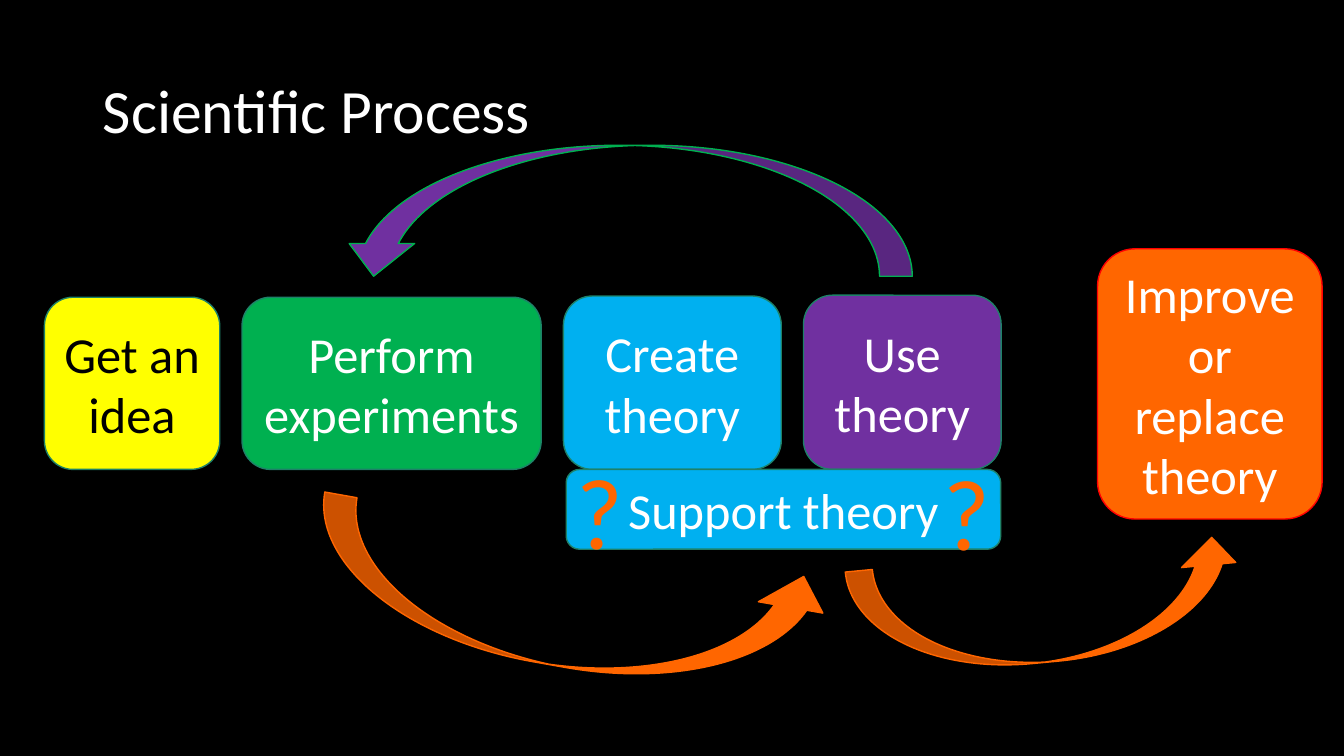
import pptx
import pptx.dml.color
import pptx.enum.shapes
import pptx.enum.text
import pptx.util

Cm = pptx.util.Cm
Shape = pptx.enum.shapes.MSO_SHAPE
Align = pptx.enum.text.PP_ALIGN
Anchor = pptx.enum.text.MSO_ANCHOR

BLACK, WHITE = "000000", "FFFFFF"
YELLOW, GREEN, BLUE, PURPLE, ORANGE = "FFFF00", "00B050", "00B0F0", "7030A0", "FF6600"
TEAL, RED = "1E8168", "FF0000"


def color(hex_value):
    return pptx.dml.color.RGBColor.from_string(hex_value)


def write(shape, text, size=36, text_color=WHITE, align=Align.CENTER,
          anchor=Anchor.MIDDLE, line_spacing=None):
    """Fill a shape with text, one paragraph per line."""
    frame = shape.text_frame
    frame.word_wrap = True
    frame.vertical_anchor = anchor
    frame.text = text
    for paragraph in frame.paragraphs:
        paragraph.alignment = align
        paragraph.line_spacing = line_spacing
        font = paragraph.runs[0].font
        font.name = "Calibri"
        font.size = pptx.util.Pt(size)
        font.color.rgb = color(text_color)


class ProcessSlide:
    def __init__(self, presentation):
        self.slide = presentation.slides.add_slide(presentation.slide_layouts[5])
        self.slide.background.fill.solid()
        self.slide.background.fill.fore_color.rgb = color(BLACK)

    def title(self, text, left, top, width, height):
        title = self.slide.shapes.title
        title.left, title.top = Cm(left), Cm(top)
        title.width, title.height = Cm(width), Cm(height)
        write(title, text, size=44, align=Align.LEFT, line_spacing=0.9)

    def preset(self, kind, left, top, width, height, fill, line):
        shape = self.slide.shapes.add_shape(kind, Cm(left), Cm(top), Cm(width), Cm(height))
        shape.shadow.inherit = False
        shape.fill.solid()
        shape.fill.fore_color.rgb = color(fill)
        shape.line.color.rgb = color(line)
        shape.line.width = pptx.util.Pt(1)
        return shape

    def box(self, text, left, top, width, height, fill, line=TEAL, text_color=WHITE):
        shape = self.preset(Shape.ROUNDED_RECTANGLE, left, top, width, height, fill, line)
        write(shape, text, text_color=text_color)

    def arrow(self, left, top, width, height, rotation, fill=ORANGE, line=ORANGE):
        shape = self.preset(Shape.CURVED_UP_ARROW, left, top, width, height, fill, line)
        shape.rotation = rotation

    def question_mark(self, left, top):
        shape = self.slide.shapes.add_textbox(Cm(left), Cm(top), Cm(3.1), Cm(3.33))
        write(shape, "?", size=72, text_color=ORANGE, anchor=Anchor.TOP)


def main():
    presentation = pptx.Presentation()
    presentation.slide_width, presentation.slide_height = Cm(33.87), Cm(19.05)
    process = ProcessSlide(presentation)
    process.title("Scientific Process", 2.34, 1.02, 29.21, 3.68)

    left, gap, bottom = 1.12, 0.56, 11.83
    steps = [
        ("Get an idea", 4.42, 4.34, YELLOW, BLACK),
        ("Perform\nexperiments", 7.54, 4.34, GREEN, WHITE),
        ("Create theory", 5.49, 4.37, BLUE, WHITE),
        ("Use theory", 4.98, 4.39, PURPLE, WHITE),
    ]
    for text, width, height, fill, text_color in steps:
        process.box(text, left, bottom - height, width, height, fill, text_color=text_color)
        left += width + gap
    process.box("Improve\nor replace theory", 27.66, 6.27, 5.66, 6.81, ORANGE, line=RED)

    process.arrow(7.8, 13.51, 13.08, 3.3, 10)
    process.arrow(8.59, 3.66, 14.4, 3.3, 180, fill=PURPLE, line=GREEN)
    process.box("Support theory", 14.27, bottom, 10.95, 2.01, BLUE)
    process.question_mark(22.81, 11.2)
    process.question_mark(13.56, 11.18)
    process.arrow(21.41, 13.94, 9.96, 2.74, 354.6)
    presentation.save("out.pptx")


if __name__ == "__main__":
    main()
